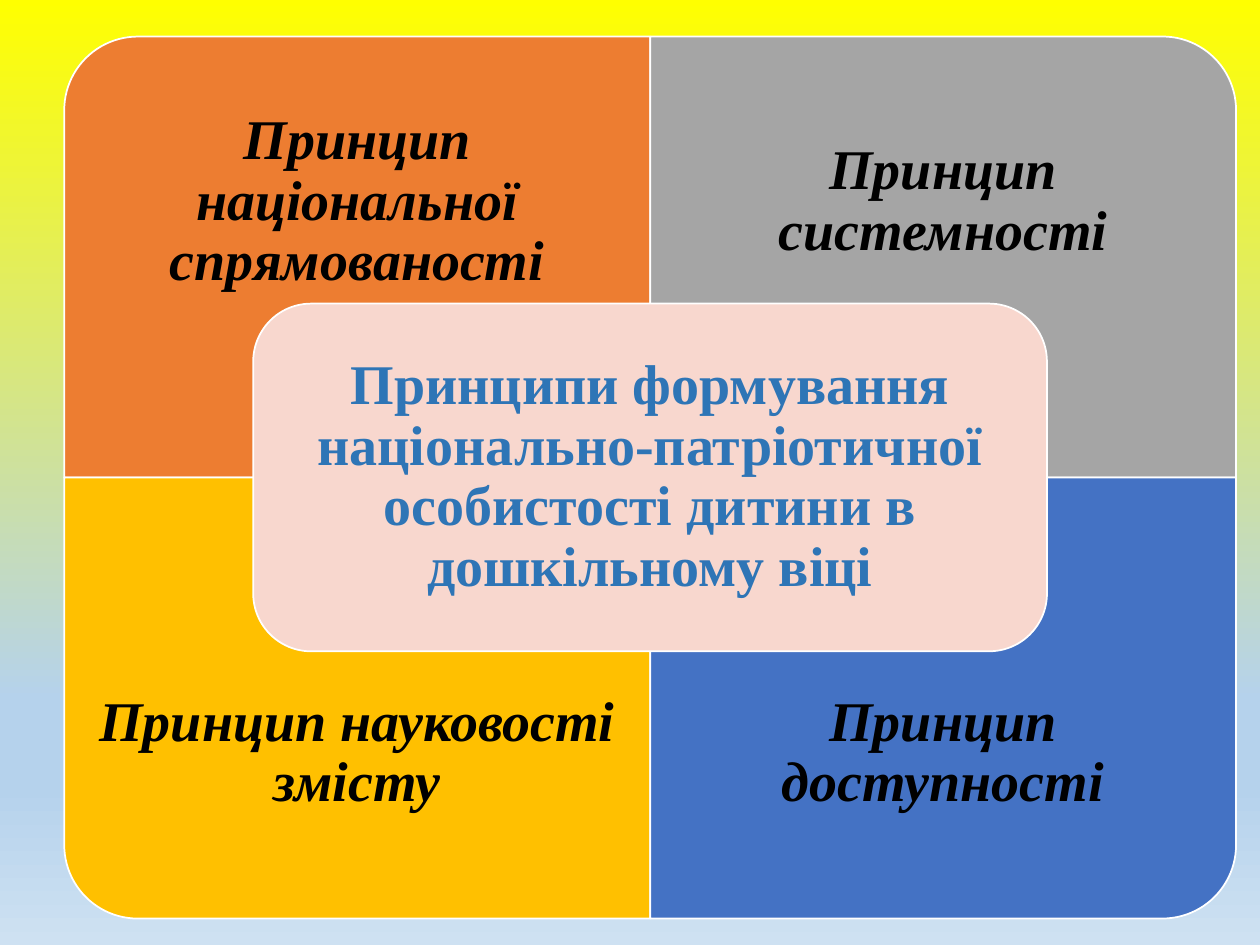
from dataclasses import dataclass

from lxml import etree
from pptx import Presentation
from pptx import util as u
from pptx.dml.color import RGBColor
from pptx.enum import shapes, text
from pptx.oxml.ns import qn


@dataclass(frozen=True)
class Theme:
    font: str = "Times New Roman"
    size: int = 32
    line: str = "FFFFFF"
    label: str = "000000"
    center_fill: str = "F8D7CE"
    center_text: str = "2E75B6"
    sky: tuple = ((0, "FFFF00"), (74, "B5D2EC"), (83, "B5D2EC"), (100, "CEE1F2"))


THEME = Theme()
SLIDE_W, SLIDE_H = 10, 7.5
LEFT, TOP = 0.51, 0.29
CELL_W, CELL_H = 4.65, 3.5
LABEL_SHARE = 0.75
CENTER_W, CENTER_H, CENTER_PAD = 6.3, 2.76, 0.135

QUADRANTS = [
    (0, 0, 270, "ED7D31", "Принцип національної спрямованості"),
    (1, 0, 0, "A5A5A5", "Принцип системності"),
    (0, 1, 180, "FFC000", "Принцип науковості змісту"),
    (1, 1, 90, "4472C4", "Принцип доступності"),
]
CENTER_TEXT = "Принципи формування національно-патріотичної особистості дитини в дошкільному віці"


def paint_background(s):
    fill = s.background.fill
    fill.gradient()
    fill.gradient_angle = 270
    stops = fill._fill._gradFill.find(qn("a:gsLst"))
    for stop in list(stops):
        stops.remove(stop)
    for share, color in THEME.sky:
        stop = etree.SubElement(stops, qn("a:gs"), pos=str(share * 1000))
        etree.SubElement(stop, qn("a:srgbClr"), val=color)


def add_block(group, kind, cx, cy, w, h, color, rotation=0):
    if rotation % 180:
        w, h = h, w
    box = (u.Inches(v) for v in (cx - w / 2, cy - h / 2, w, h))
    sp = group.shapes.add_shape(kind, *box)
    sp.rotation = rotation
    sp.shadow.inherit = False
    sp.fill.solid()
    sp.fill.fore_color.rgb = RGBColor.from_string(color)
    sp.line.color.rgb = RGBColor.from_string(THEME.line)
    sp.line.width = u.Pt(1)


def add_label(group, x, y, w, h, wording, color, inset, italic):
    sp = group.shapes.add_textbox(*(u.Inches(v) for v in (x, y, w, h)))
    tf = sp.text_frame
    tf.word_wrap = True
    tf.vertical_anchor = text.MSO_ANCHOR.MIDDLE
    tf.margin_left = tf.margin_right = u.Inches(inset)
    tf.margin_top = tf.margin_bottom = u.Inches(inset)
    p = tf.paragraphs[0]
    p.text = wording
    p.alignment = text.PP_ALIGN.CENTER
    p.line_spacing = 0.9
    p.font.name = THEME.font
    p.font.size = u.Pt(THEME.size)
    p.font.bold = True
    p.font.italic = italic
    p.font.color.rgb = RGBColor.from_string(color)


def add_quadrant(group, col, row, rotation, color, wording):
    x, y = LEFT + col * CELL_W, TOP + row * CELL_H
    add_block(group, shapes.MSO_SHAPE.ROUND_1_RECTANGLE,
              x + CELL_W / 2, y + CELL_H / 2, CELL_W, CELL_H, color, rotation)
    label_y = y + row * (1 - LABEL_SHARE) * CELL_H
    add_label(group, x, label_y, CELL_W, LABEL_SHARE * CELL_H,
              wording, THEME.label, 0.25, True)


def add_center(group):
    cx, cy = LEFT + CELL_W, TOP + CELL_H
    add_block(group, shapes.MSO_SHAPE.ROUNDED_RECTANGLE,
              cx, cy, CENTER_W, CENTER_H, THEME.center_fill)
    w, h = CENTER_W - 2 * CENTER_PAD, CENTER_H - 2 * CENTER_PAD
    add_label(group, cx - w / 2, cy - h / 2, w, h,
              CENTER_TEXT, THEME.center_text, 0.13, False)


def main():
    prs = Presentation()
    prs.slide_width, prs.slide_height = u.Inches(SLIDE_W), u.Inches(SLIDE_H)
    s = prs.slides.add_slide(prs.slide_layouts.get_by_name("Blank"))
    paint_background(s)
    group = s.shapes.add_group_shape()
    for quadrant in QUADRANTS:
        add_quadrant(group, *quadrant)
    add_center(group)
    prs.save("out.pptx")


if __name__ == "__main__":
    main()
